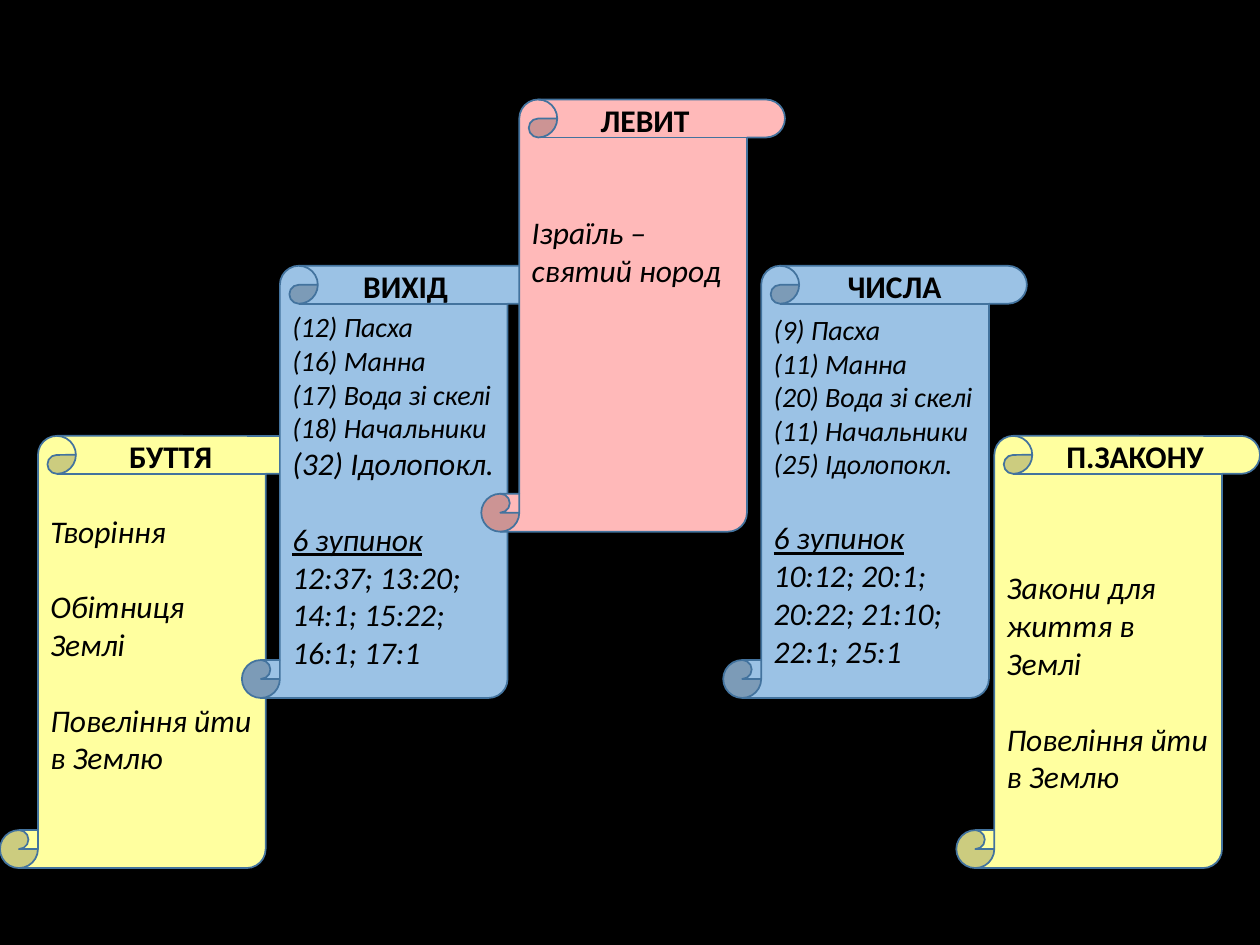
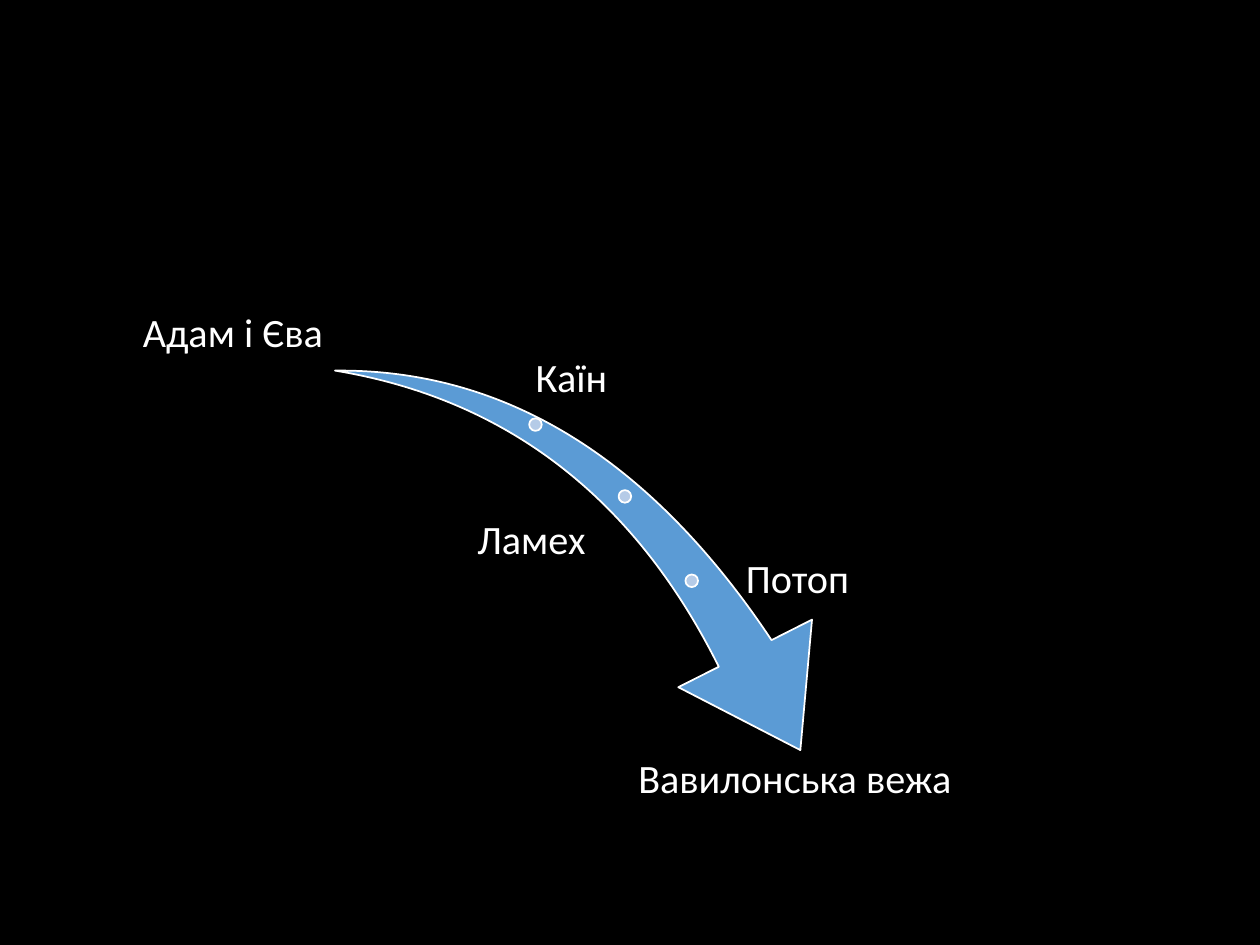
from pptx import Presentation
from pptx import util as u
from pptx.dml.color import RGBColor
from pptx.enum import shapes, text

FONT = "Calibri"
BLACK, WHITE = "000000", "FFFFFF"
YELLOW, BLUE, PINK = "FFFF9F", "9BC2E5", "FFB9B9"
SCROLL_LINE, ARROW_BLUE, DOT_BLUE = "43739E", "5B9BD5", "B5CBE7"
LEFT, CENTER, RIGHT = text.PP_ALIGN.LEFT, text.PP_ALIGN.CENTER, text.PP_ALIGN.RIGHT
TOP, MIDDLE, BOTTOM = text.MSO_ANCHOR.TOP, text.MSO_ANCHOR.MIDDLE, text.MSO_ANCHOR.BOTTOM
LINE_GAP = 21.6  # one line of 18-point text


def add_preset(group, preset, box, fill, line):
    shape = group.shapes.add_shape(preset, *[u.Inches(value) for value in box])
    shape.shadow.inherit = False
    shape.fill.solid()
    shape.fill.fore_color.rgb = RGBColor.from_string(fill)
    shape.line.color.rgb = RGBColor.from_string(line)
    shape.line.width = u.Pt(1)
    return shape


def write(shape, lines, size=18, color=BLACK, bold=False, italic=False, align=LEFT,
          anchor=TOP, wrap=True, insets=(0.1, 0.05, 0.1, 0.05), spacing=None):
    """Each line is a string or (string, overrides: size, gap, underline)."""
    frame = shape.text_frame
    frame.word_wrap = wrap
    frame.vertical_anchor = anchor
    (frame.margin_left, frame.margin_top,
     frame.margin_right, frame.margin_bottom) = [u.Inches(inset) for inset in insets]
    for index, line in enumerate(lines):
        words, own = (line, {}) if isinstance(line, str) else line
        paragraph = frame.paragraphs[0] if index == 0 else frame.add_paragraph()
        paragraph.alignment = align
        paragraph.line_spacing = spacing
        if "gap" in own:
            paragraph.space_before = u.Pt(own["gap"])
        run = paragraph.add_run()
        run.text = words
        run.font.name = FONT
        run.font.size = u.Pt(own.get("size", size))
        run.font.bold = bold
        run.font.italic = italic
        run.font.underline = own.get("underline", False)
        run.font.color.rgb = RGBColor.from_string(color)


presentation = Presentation()
presentation.slide_width = u.Inches(10)
presentation.slide_height = u.Inches(7.5)
background = presentation.slide_master.background.fill
background.solid()
background.fore_color.rgb = RGBColor.from_string(BLACK)
blank = presentation.slide_layouts[6]

# Slide 1: five books as scrolls, rising to the middle one
SCROLL_WIDTH, SCROLL_HEIGHT = 2.41, 3.43
LOW, MID, HIGH = 3.46, 2.11, 0.79
small = {"size": 16}
apart = {"gap": LINE_GAP}
stops = {"gap": LINE_GAP, "underline": True}

# title, title left and width, scroll left and top, fill, top inset, lines
books = [
    ("БУТТЯ", 0.92, 0.87, 0, LOW, YELLOW, 0.3,
     ["Творіння", ("Обітниця Землі", apart), ("Повеління йти в Землю", apart)]),
    ("ВИХІД", 2.78, 0.88, 1.92, MID, BLUE, 0.05,
     [("(12) Пасха", small), ("(16) Манна", small), ("(17) Вода зі скелі", small),
      ("(18) Начальники", small), "(32) Ідолопокл.", ("6 зупинок", stops),
      "12:37; 13:20; 14:1; 15:22; 16:1; 17:1"]),
    ("ЛЕВИТ", 4.66, 0.92, 3.82, HIGH, PINK, 0.6, ["Ізраїль – святий нород"]),
    ("ЧИСЛА", 6.62, 0.96, 5.74, MID, BLUE, 0.07,
     [("(9) Пасха", small), ("(11) Манна", small), ("(20) Вода зі скелі", small),
      ("(11) Начальники", small), ("(25) Ідолопокл.", small), ("6 зупинок", stops),
      "10:12; 20:1; 20:22; 21:10; 22:1; 25:1"]),
    ("П.ЗАКОНУ", 8.36, 1.3, 7.59, LOW, YELLOW, 0.75,
     ["Закони для життя в Землі", ("Повеління йти в Землю", apart)]),
]
slide = presentation.slides.add_slide(blank)
for title, title_left, title_width, left, top, fill, inset, lines in books:
    group = slide.shapes.add_group_shape()
    scroll = add_preset(group, shapes.MSO_SHAPE.VERTICAL_SCROLL,
                        (left, top, SCROLL_WIDTH, SCROLL_HEIGHT), fill, SCROLL_LINE)
    write(scroll, lines, italic=True, insets=(0.1, inset, 0.1, 0))
    heading = group.shapes.add_textbox(u.Inches(title_left), u.Inches(top - 0.04),
                                       u.Inches(title_width), u.Inches(0.4))
    write(heading, [title], bold=True, align=CENTER, wrap=False)

# Slide 2: the falling arrow with its milestones
slide = presentation.slides.add_slide(blank)
group = slide.shapes.add_group_shape()
arrow = add_preset(group, shapes.MSO_SHAPE.SWOOSH_ARROW, (2.66, 2.94, 4.11, 2.86),
                   ARROW_BLUE, WHITE)
arrow.adjustments[0], arrow.adjustments[1] = 0.163, 0.314
arrow.rotation = 69.6

for left, top in [(4.2, 3.32), (4.91, 3.89), (5.44, 4.56)]:
    add_preset(group, shapes.MSO_SHAPE.OVAL, (left, top, 0.1, 0.1), DOT_BLUE, WHITE)

milestones = [
    ("Адам і Єва", 0.88, 2.1, 1.94, CENTER, BOTTOM),
    ("Каїн", 4.22, 2.63, 1.21, LEFT, MIDDLE),
    ("Ламех", 3.28, 3.92, 1.4, RIGHT, MIDDLE),
    ("Потоп", 5.89, 4.23, 1.73, LEFT, MIDDLE),
    ("Вавилонська вежа", 5, 5.99, 2.62, CENTER, TOP),
]
for name, left, top, width, align, anchor in milestones:
    label = group.shapes.add_textbox(u.Inches(left), u.Inches(top),
                                     u.Inches(width), u.Inches(0.76))
    write(label, [name], size=23, color=WHITE, align=align, anchor=anchor,
          insets=(0.03,) * 4, spacing=0.9)

presentation.save("out.pptx")
